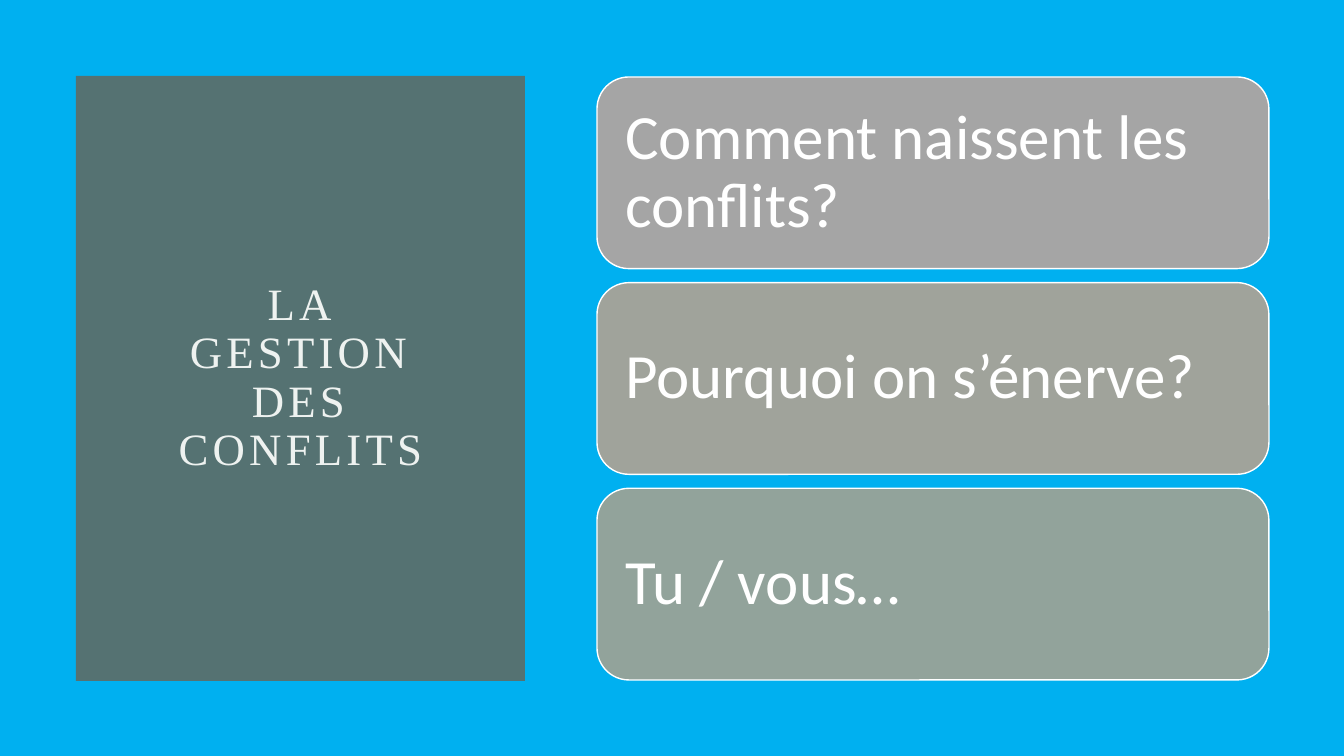
from pptx import Presentation
from pptx.dml.color import RGBColor
from pptx.enum.shapes import MSO_SHAPE
from pptx.enum.text import MSO_ANCHOR, PP_ALIGN
from pptx.util import Pt

SLIDE_W, SLIDE_H = 1344, 756
EMU_PER_PX = 12192000 / SLIDE_W

QUESTIONS = [
    ("Comment naissent les conflits?", "A5A5A5"),
    ("Pourquoi on s’énerve?", "A0A39B"),
    ("Tu / vous…", "92A39B"),
]


def px(length):
    return round(length * EMU_PER_PX)


def color(hex_code):
    return RGBColor.from_string(hex_code)


def add_panel(slide, preset, box, fill, outline=None):
    panel = slide.shapes.add_shape(preset, *map(px, box))
    panel.shadow.inherit = False
    panel.fill.solid()
    panel.fill.fore_color.rgb = color(fill)
    if outline:
        panel.line.color.rgb = color(outline)
        panel.line.width = Pt(1)
    else:
        panel.line.fill.background()
    return panel


def write_text(panel, text, *, font, size, ink, align, inset, spacing=0):
    """Set one paragraph, centred vertically; spacing is in points."""
    frame = panel.text_frame
    frame.word_wrap = True
    frame.vertical_anchor = MSO_ANCHOR.MIDDLE
    frame.margin_left = frame.margin_right = px(inset)
    frame.margin_top = frame.margin_bottom = px(19)
    paragraph = frame.paragraphs[0]
    paragraph.alignment = align
    paragraph.line_spacing = 0.9
    run = paragraph.add_run()
    run.text = text
    run.font.name = font
    run.font.size = Pt(size)
    run.font.color.rgb = color(ink)
    if spacing:
        run.font._element.set("spc", str(spacing * 100))


def add_title_panel(slide, box):
    panel = add_panel(slide, MSO_SHAPE.RECTANGLE, box, "557272")
    write_text(panel, "LA GESTION DES CONFLITS", font="Times New Roman", size=32,
               ink="EEF2F0", align=PP_ALIGN.CENTER, inset=85, spacing=3)


def add_question_cards(slide, box, gap=14):
    left, top, width, height = box
    card_height = (height - gap * (len(QUESTIONS) - 1)) / len(QUESTIONS)
    for index, (question, fill) in enumerate(QUESTIONS):
        card_top = top + index * (card_height + gap)
        card = add_panel(slide, MSO_SHAPE.ROUNDED_RECTANGLE,
                         (left, card_top, width, card_height), fill, outline="FFFFFF")
        write_text(card, question, font="Calibri", size=45, ink="FFFFFF",
                   align=PP_ALIGN.LEFT, inset=19)


def main():
    deck = Presentation()
    deck.slide_width, deck.slide_height = px(SLIDE_W), px(SLIDE_H)
    slide = deck.slides.add_slide(deck.slide_layouts[6])
    slide.background.fill.solid()
    slide.background.fill.fore_color.rgb = color("00B0F0")
    add_title_panel(slide, (76, 76, 449, 605))
    add_question_cards(slide, (597, 77, 672, 603))
    deck.save("out.pptx")


if __name__ == "__main__":
    main()
